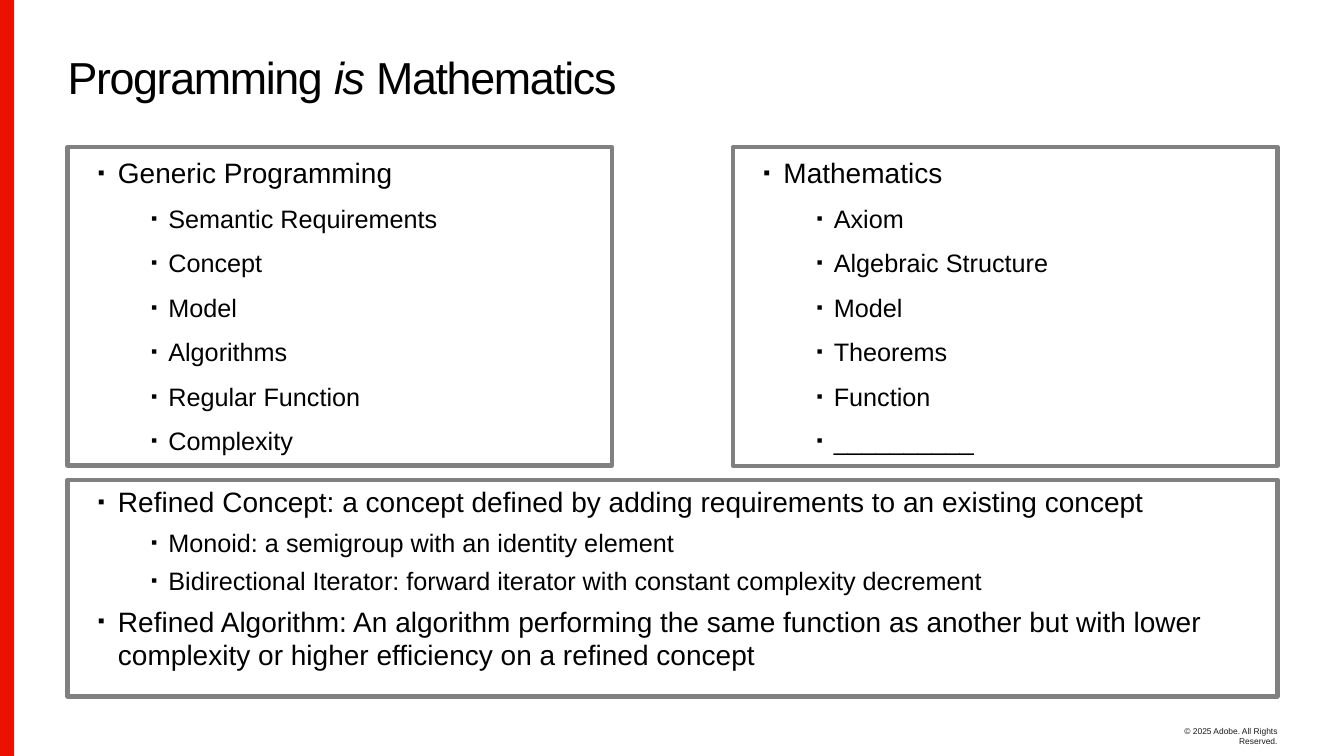
from lxml import etree
from pptx import Presentation
from pptx.dml.color import RGBColor
from pptx.enum.shapes import MSO_SHAPE
from pptx.enum.text import MSO_ANCHOR, MSO_AUTO_SIZE, PP_ALIGN
from pptx.oxml.ns import qn
from pptx.util import Inches, Pt

RECT = MSO_SHAPE.RECTANGLE
TOP, MIDDLE = MSO_ANCHOR.TOP, MSO_ANCHOR.MIDDLE
LEFT, RIGHT = PP_ALIGN.LEFT, PP_ALIGN.RIGHT
NO_FIT = MSO_AUTO_SIZE.NONE

RED = RGBColor(0xEB, 0x10, 0x00)
GRAY = RGBColor(0x80, 0x80, 0x80)
BLACK = RGBColor(0x00, 0x00, 0x00)
DARK = RGBColor(0x19, 0x19, 0x19)

FONT = "Arial"
LEVELS = [
    {"size": 20, "margin": 0.5, "indent": -0.2},
    {"size": 18, "margin": 1, "indent": -0.17},
]
COLUMN_SPACING = {"line": 1.1, "before": (12, 8)}
DETAIL_SPACING = {"line": 1.0, "before": (6, 6)}

PROGRAMMING = [
    (0, "Generic Programming"),
    (1, "Semantic Requirements"),
    (1, "Concept"),
    (1, "Model"),
    (1, "Algorithms"),
    (1, "Regular Function"),
    (1, "Complexity"),
]
MATHEMATICS = [
    (0, "Mathematics"),
    (1, "Axiom"),
    (1, "Algebraic Structure"),
    (1, "Model"),
    (1, "Theorems"),
    (1, "Function"),
    (1, "__________"),
]
REFINEMENT = [
    (0, "Refined Concept: a concept defined by adding requirements to an existing concept"),
    (1, "Monoid: a semigroup with an identity element"),
    (1, "Bidirectional Iterator: forward iterator with constant complexity decrement"),
    (0, "Refined Algorithm: An algorithm performing the same function as another "
        "but with lower complexity or higher efficiency on a refined concept"),
]


def set_attrs(obj, values):
    for name, value in values.items():
        setattr(obj, name, value)


def place(sp, left, top, width, height):
    set_attrs(sp, {"left": Inches(left), "top": Inches(top),
                   "width": Inches(width), "height": Inches(height)})


def set_frame(tf, anchor=TOP, inset=0.05):
    set_attrs(tf, {"word_wrap": True, "auto_size": NO_FIT,
                   "vertical_anchor": anchor,
                   "margin_left": 0, "margin_right": 0,
                   "margin_top": Inches(inset), "margin_bottom": Inches(inset)})


def set_font(font, size, color=BLACK, **extra):
    set_attrs(font, {"name": FONT, "size": Pt(size), **extra})
    font.color.rgb = color


def add_bullet(p, margin, indent):
    pPr = p._p.get_or_add_pPr()
    pPr.set("marL", str(Inches(margin)))
    pPr.set("indent", str(Inches(indent)))
    for tag, attr, value in (("a:buSzPct", "val", "70000"),
                             ("a:buFont", "typeface", FONT),
                             ("a:buChar", "char", "▪")):
        etree.SubElement(pPr, qn(tag)).set(attr, value)


def fill_box(sp, items, spacing):
    sp.line.color.rgb = GRAY
    sp.line.width = Pt(3)
    tf = sp.text_frame
    set_frame(tf)
    for i, (level, text) in enumerate(items):
        p = tf.paragraphs[0] if i == 0 else tf.add_paragraph()
        style = LEVELS[level]
        add_bullet(p, style["margin"], style["indent"])
        before = spacing["before"][level] if i else 0
        set_attrs(p, {"level": level, "alignment": LEFT,
                      "line_spacing": spacing["line"],
                      "space_before": Pt(before), "space_after": Pt(0)})
        r = p.add_run()
        r.text = text
        set_font(r.font, style["size"])


def add_rect(s, left, top, width, height):
    sp = s.shapes.add_shape(RECT, Inches(left), Inches(top),
                            Inches(width), Inches(height))
    sp.shadow.inherit = False
    return sp


def add_bar(s):
    sp = add_rect(s, 0, 0, 0.14, 7.5)
    sp.fill.solid()
    sp.fill.fore_color.rgb = RED
    sp.line.fill.background()


def fill_title(sp):
    place(sp, 0.67, 0.29, 12, 1.03)
    set_frame(sp.text_frame, MIDDLE)
    p = sp.text_frame.paragraphs[0]
    set_attrs(p, {"alignment": LEFT, "line_spacing": 0.8})
    for text, italic in (("Programming ", False), ("is", True),
                         (" Mathematics", False)):
        r = p.add_run()
        r.text = text
        set_font(r.font, 32, italic=italic)
        r._r.get_or_add_rPr().set("spc", "-100")


def add_copyright(s):
    sp = s.shapes.add_textbox(Inches(11.48), Inches(7.2),
                              Inches(1.19), Inches(0.2))
    set_frame(sp.text_frame, inset=0)
    p = sp.text_frame.paragraphs[0]
    p.alignment = RIGHT
    r = p.add_run()
    r.text = "© 2025 Adobe. All Rights Reserved."
    set_font(r.font, 6, DARK)


def main():
    prs = Presentation()
    set_attrs(prs, {"slide_width": Inches(13.33), "slide_height": Inches(7.5)})
    s = prs.slides.add_slide(prs.slide_layouts[3])
    title, detail, right = s.placeholders

    add_copyright(s)
    add_bar(s)
    fill_title(title)

    place(detail, 0.67, 4.76, 12, 2.15)
    fill_box(detail, REFINEMENT, DETAIL_SPACING)
    place(right, 7.27, 1.46, 5.4, 3.16)
    fill_box(right, MATHEMATICS, COLUMN_SPACING)
    left = add_rect(s, 0.67, 1.46, 5.4, 3.16)
    left.fill.background()
    fill_box(left, PROGRAMMING, COLUMN_SPACING)

    prs.save("out.pptx")


if __name__ == "__main__":
    main()
